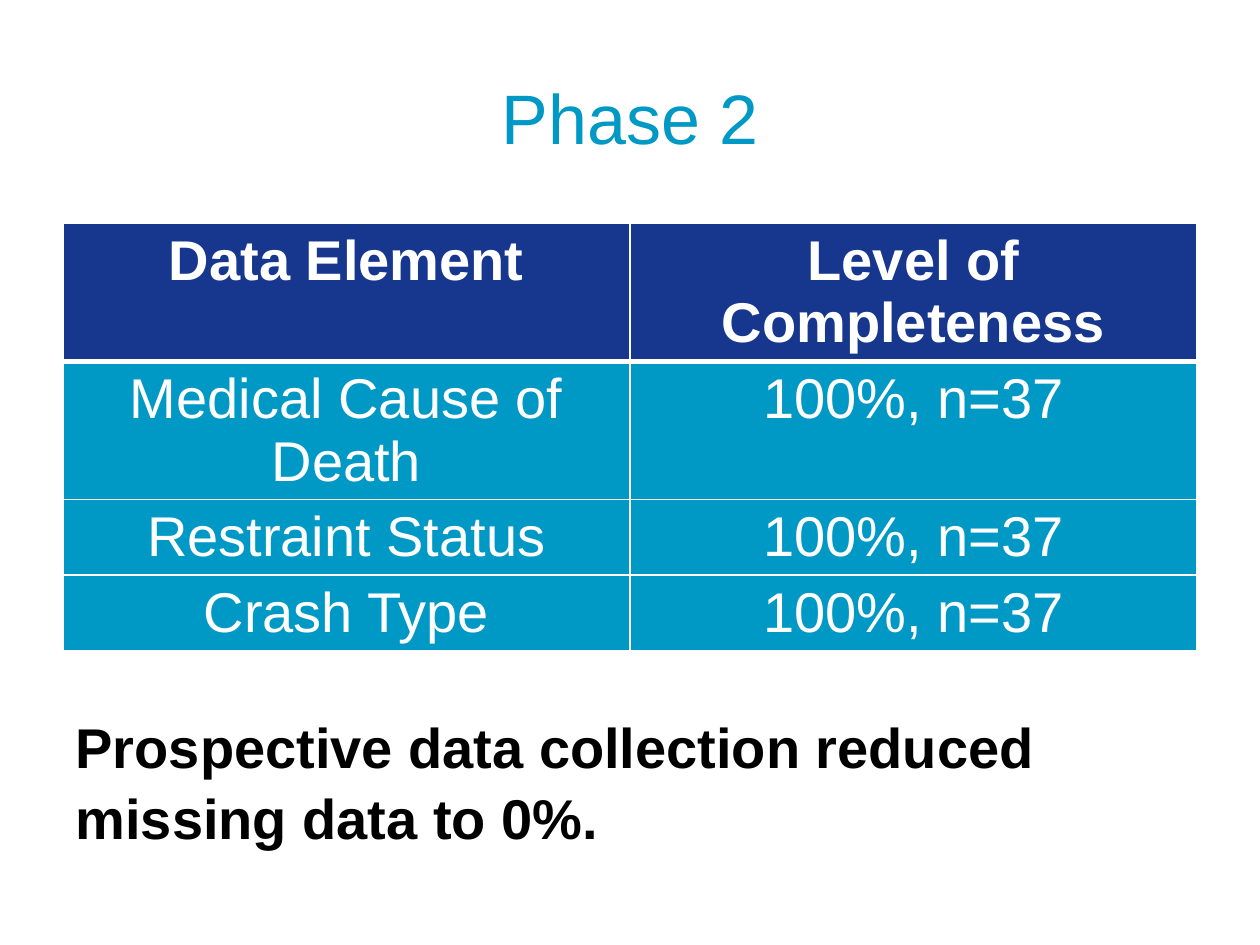
from dataclasses import dataclass

from lxml import etree
from pptx import Presentation
from pptx.dml.color import RGBColor
from pptx.enum.text import MSO_ANCHOR, MSO_AUTO_SIZE, PP_ALIGN
from pptx.oxml.ns import qn
from pptx.util import Pt

CENTER, LEFT = PP_ALIGN.CENTER, PP_ALIGN.LEFT
TOP, MIDDLE = MSO_ANCHOR.TOP, MSO_ANCHOR.MIDDLE
NO_AUTO_SIZE = MSO_AUTO_SIZE.NONE

FONT = "Arial"
COLORS = {"navy": "17378F", "cyan": "0099C5", "white": "FFFFFF", "black": "000000"}
MARGIN, CONTENT_WIDTH = 36, 648
TABLE_TOP = 127.44


@dataclass
class TableRow:
    element: str
    completeness: str
    height: float
    header: bool = False


ROWS = [
    TableRow("Data Element", "Level of Completeness", 78, header=True),
    TableRow("Medical Cause of Death", "100%, n=37", 79),
    TableRow("Restraint Status", "100%, n=37", 43),
    TableRow("Crash Type", "100%, n=37", 43),
]


def write_text(frame, text: str, *, size: float, color: str, bold: bool = False,
               align=CENTER, anchor=TOP):
    frame.word_wrap = True
    frame.vertical_anchor = anchor
    para = frame.paragraphs[0]
    para.alignment = align
    span = para.add_run()
    span.text = text
    span.font.name = FONT
    span.font.size = Pt(size)
    span.font.bold = bold
    span.font.color.rgb = RGBColor.from_string(COLORS[color])
    return para


def place(box, top: float, height: float) -> None:
    box.left, box.top = Pt(MARGIN), Pt(top)
    box.width, box.height = Pt(CONTENT_WIDTH), Pt(height)


def set_borders(cell, widths: dict[str, float]) -> None:
    """Put white borders before the cell's fill, as the schema requires."""
    properties = cell._tc.get_or_add_tcPr()
    for position, (side, width) in enumerate(widths.items()):
        line = etree.Element(qn(f"a:{side}"), w=str(Pt(width)))
        fill = etree.SubElement(line, qn("a:solidFill"))
        etree.SubElement(fill, qn("a:srgbClr"), val=COLORS["white"])
        properties.insert(position, line)


def add_completeness_table(slide, rows: list[TableRow]) -> None:
    total = sum(row.height for row in rows)
    table = slide.shapes.add_table(len(rows), 2, Pt(MARGIN), Pt(TABLE_TOP),
                                   Pt(CONTENT_WIDTH), Pt(total)).table
    for index, row in enumerate(rows):
        table.rows[index].height = Pt(row.height)
        top = 3 if index and rows[index - 1].header else 1
        bottom = 3 if row.header else 1
        for column, text in enumerate((row.element, row.completeness)):
            cell = table.cell(index, column)
            write_text(cell.text_frame, text, size=32, color="white", bold=row.header)
            cell.fill.solid()
            fill_color = COLORS["navy" if row.header else "cyan"]
            cell.fill.fore_color.rgb = RGBColor.from_string(fill_color)
            set_borders(cell, {"lnL": 1, "lnR": 1, "lnT": top, "lnB": bottom})


def fill_conclusion(body) -> None:
    place(body, 401, 85)
    para = write_text(body.text_frame, "Prospective data collection reduced missing data to 0%.",
                      size=32, color="black", bold=True, align=LEFT)
    body.text_frame.auto_size = NO_AUTO_SIZE
    para.line_spacing = 1.06
    para.space_before = Pt(2)
    properties = para._p.get_or_add_pPr()
    properties.set("marL", "0")
    properties.set("indent", "0")
    etree.SubElement(properties, qn("a:buNone"))


def main() -> None:
    deck = Presentation()
    deck.slide_width, deck.slide_height = Pt(720), Pt(540)
    page = deck.slides.add_slide(deck.slide_layouts[1])
    title, body = page.placeholders
    place(title, 21.6, 90)
    write_text(title.text_frame, "Phase 2", size=40, color="cyan", anchor=MIDDLE)
    add_completeness_table(page, ROWS)
    fill_conclusion(body)
    deck.save("out.pptx")


if __name__ == "__main__":
    main()
